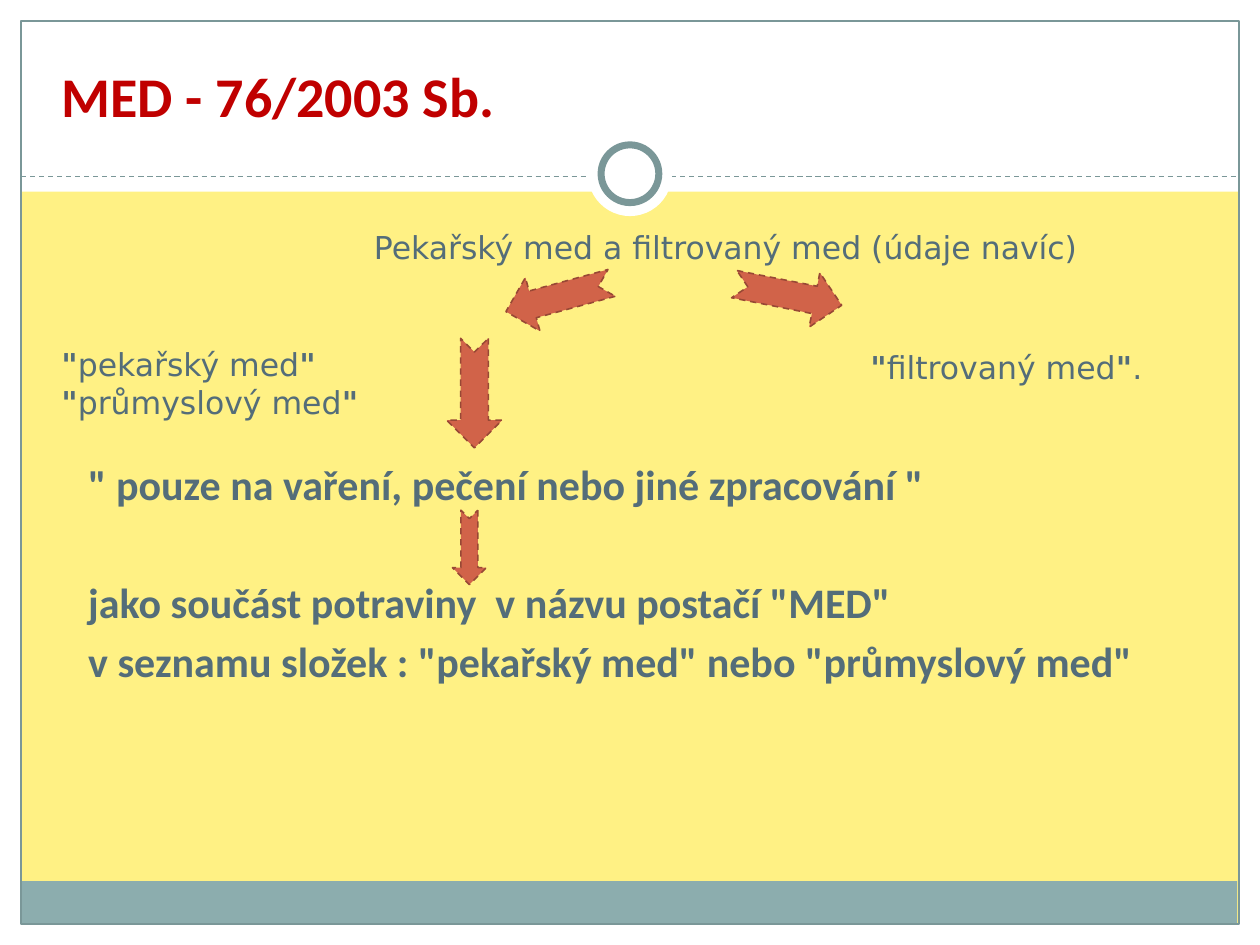
from lxml import etree
from pptx import Presentation
from pptx.dml.color import RGBColor
from pptx.enum.dml import MSO_LINE
from pptx.enum.shapes import MSO_CONNECTOR, MSO_SHAPE
from pptx.enum.text import MSO_ANCHOR, MSO_AUTO_SIZE, PP_ALIGN
from pptx.oxml.ns import qn
from pptx.util import Pt

RECTANGLE, OVAL = MSO_SHAPE.RECTANGLE, MSO_SHAPE.OVAL
NOTCHED_ARROW = MSO_SHAPE.NOTCHED_RIGHT_ARROW
STRAIGHT, DASH = MSO_CONNECTOR.STRAIGHT, MSO_LINE.DASH
TOP, LEFT, NO_AUTOFIT = MSO_ANCHOR.TOP, PP_ALIGN.LEFT, MSO_AUTO_SIZE.NONE

YELLOW = RGBColor(0xFF, 0xF1, 0x84)
WHITE = RGBColor(0xFF, 0xFF, 0xFF)
TEAL = RGBColor(0x8C, 0xAD, 0xAE)
DARK_TEAL = RGBColor(0x7A, 0x97, 0x98)
SLATE = RGBColor(0x54, 0x6D, 0x79)
RED = RGBColor(0xC0, 0x00, 0x00)
RUST = RGBColor(0xD1, 0x63, 0x49)
DARK_RUST = RGBColor(0x98, 0x48, 0x35)

WIDTH, HEIGHT, MARGIN = 720, 540, 12
BODY_GAP, SECTION_GAP = 4.8, 38.8


def place(item, left, top, width, height):
    """Set position and size in points."""
    item.left, item.top = Pt(left), Pt(top)
    item.width, item.height = Pt(width), Pt(height)


def add_figure(slide, preset, box, fill=None, line=None, weight=0.75):
    """Add a flat preset shape with optional fill and outline."""
    figure = slide.shapes.add_shape(preset, *map(Pt, box))
    figure.shadow.inherit = False
    if fill is None:
        figure.fill.background()
    else:
        figure.fill.solid()
        figure.fill.fore_color.rgb = fill
    if line is None:
        figure.line.fill.background()
    else:
        figure.line.color.rgb = line
        figure.line.width = Pt(weight)
    return figure


def add_divider(slide, height):
    """Add the dashed line under the heading."""
    divider = slide.shapes.add_connector(
        STRAIGHT, Pt(MARGIN), Pt(height), Pt(WIDTH - MARGIN), Pt(height))
    divider.line.color.rgb = DARK_TEAL
    divider.line.width = Pt(0.75)
    divider.line.dash_style = DASH
    etree.SubElement(divider.element.spPr, qn("a:effectLst"))


def add_arrow(slide, box, rotation):
    """Add a rotated notched arrow with a dashed outline."""
    arrow = add_figure(slide, NOTCHED_ARROW, box, RUST, DARK_RUST, 0.9)
    arrow.line.dash_style = DASH
    arrow.rotation = rotation


def write(frame, paragraphs, size=18, font="DejaVu Sans", color=SLATE, gaps=None):
    """Write paragraphs given as lists of (text, bold) runs."""
    frame.word_wrap = True
    frame.auto_size = NO_AUTOFIT
    frame.vertical_anchor = TOP
    for index, runs in enumerate(paragraphs):
        paragraph = frame.add_paragraph() if index else frame.paragraphs[0]
        paragraph.alignment = LEFT
        paragraph.space_before = Pt(gaps[index] if gaps else 0)
        for text, bold in runs:
            run = paragraph.add_run()
            run.text = text
            run.font.size, run.font.name = Pt(size), font
            run.font.bold = bold
            run.font.color.rgb = color


def add_label(slide, box, paragraphs):
    """Add a text box for a honey type."""
    label = slide.shapes.add_textbox(*map(Pt, box))
    write(label.text_frame, paragraphs)


def quoted(name):
    """Return runs for a name between bold quotation marks."""
    return [('"', True), (name, False), ('"', True)]


def remove_bullets(frame):
    """Turn list paragraphs into plain flush ones."""
    for paragraph in frame.paragraphs:
        properties = paragraph._p.get_or_add_pPr()
        properties.set("marL", "0")
        properties.set("indent", "0")
        etree.SubElement(properties, qn("a:buNone"))


def add_frame(slide):
    """Draw the white border, footer band, outline and ring."""
    for border in ((0, 528, WIDTH, MARGIN), (0, 0, WIDTH, 109.5),
                   (0, 0, MARGIN, HEIGHT), (WIDTH - MARGIN, 0, MARGIN, HEIGHT)):
        add_figure(slide, RECTANGLE, border, WHITE)
    add_figure(slide, RECTANGLE, (11.5, 503.5, 695.5, 24.5), TEAL)
    add_figure(slide, RECTANGLE, (MARGIN, MARGIN, 696, 516), line=DARK_TEAL)
    add_divider(slide, 100.8)
    add_figure(slide, OVAL, (336, 75.5, 48, 48), WHITE)
    add_figure(slide, OVAL, (343.5, 82.8, 33, 33), WHITE, DARK_TEAL, 4)


def add_title_and_body(slide):
    """Fill the placeholders and bring them in front of the frame."""
    title, body = slide.placeholders
    place(title, 28, 31.7, 468, 39.6)
    write(title.text_frame, [[("MED - 76/2003 Sb.", True)]], 32, "Calibri", RED)
    place(body, 43.2, 258.5, 621.4, 198.7)
    rules = ('" pouze na vaření, pečení nebo jiné zpracování "',
             'jako součást potraviny  v názvu postačí "MED"',
             'v seznamu složek : "pekařský med" nebo "průmyslový med"')
    write(body.text_frame, [[(rule, True)] for rule in rules], 24, "Calibri",
          gaps=(0, SECTION_GAP, BODY_GAP))
    remove_bullets(body.text_frame)
    for placeholder in (body, title):
        placeholder.element.getparent().append(placeholder.element)


def main():
    """Build the honey labelling slide."""
    deck = Presentation()
    deck.slide_width, deck.slide_height = Pt(WIDTH), Pt(HEIGHT)
    slide = deck.slides.add_slide(deck.slide_layouts[1])
    slide.background.fill.solid()
    slide.background.fill.fore_color.rgb = YELLOW
    add_frame(slide)
    add_title_and_body(slide)
    add_label(slide, (206.6, 126.7, 425.5, 28.8),
              [[("Pekařský med a filtrovaný med (údaje navíc)", False)]])
    add_label(slide, (28, 193.7, 257, 51),
              [quoted("pekařský med"), quoted("průmyslový med")])
    add_label(slide, (490.3, 195.1, 187.2, 28.8),
              [quoted("filtrovaný med") + [(".", False)]])
    for left, top, width, height, rotation in (
            (288, 154, 62.6, 31.7, 164.8), (419, 152.6, 62.6, 31.7, 11.1),
            (239.8, 208.8, 62.6, 31.7, 90), (247, 303.1, 42.5, 19.4, 90)):
        add_arrow(slide, (left, top, width, height), rotation)
    deck.save("out.pptx")


if __name__ == "__main__":
    main()
